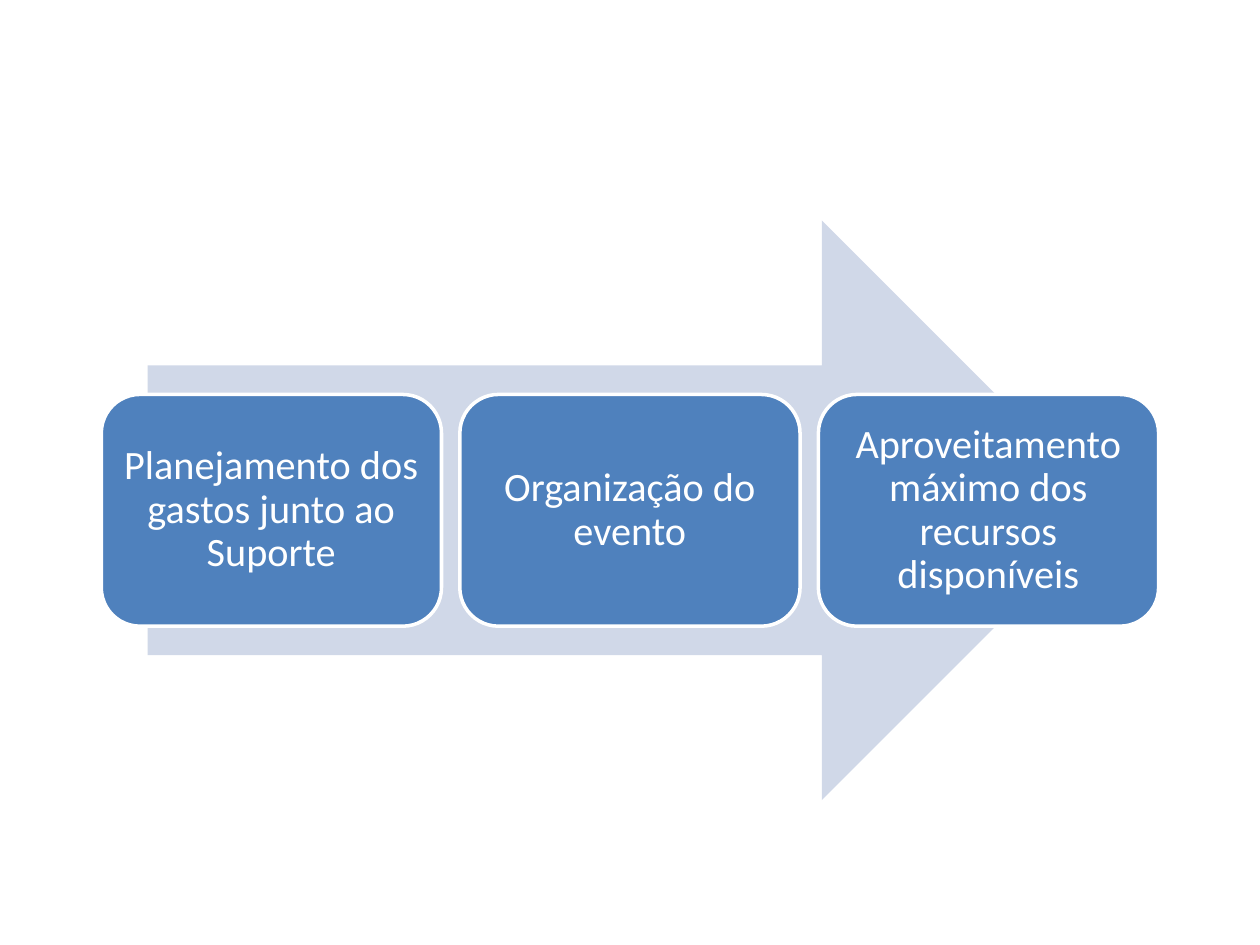
from dataclasses import dataclass

from pptx import Presentation
from pptx import util as u
from pptx.dml.color import RGBColor
from pptx.enum import shapes, text


@dataclass(frozen=True)
class Theme:
    """Colours, font and sizes of the process slide."""
    arrow: str = "D0D8E8"
    step: str = "4F81BD"
    light: str = "FFFFFF"
    font: str = "Calibri"
    size: float = 23
    border: float = 2
    inset: float = 0.7


class SlideBuilder:
    """Draws styled elements on the current slide."""

    def __init__(self, s, theme):
        self.s = s
        self.theme = theme

    def shape(self, kind, x, y, w, h, color):
        """Add a flat filled shape without outline."""
        sp = self.s.shapes.add_shape(kind, u.Pt(x), u.Pt(y), u.Pt(w), u.Pt(h))
        sp.shadow.inherit = False
        sp.fill.solid()
        sp.fill.fore_color.rgb = RGBColor.from_string(color)
        sp.line.fill.background()
        return sp

    def arrow(self, x, y, w, h):
        """Add the background arrow."""
        return self.shape(shapes.MSO_SHAPE.RIGHT_ARROW, x, y, w, h, self.theme.arrow)

    def step(self, label, x, y, w, h):
        """Add a rounded step box with a centred label."""
        t = self.theme
        light = RGBColor.from_string(t.light)
        sp = self.shape(shapes.MSO_SHAPE.ROUNDED_RECTANGLE, x, y, w, h, t.step)
        sp.line.color.rgb = light
        sp.line.width = u.Pt(t.border)
        tf = sp.text_frame
        tf.word_wrap = True
        tf.vertical_anchor = text.MSO_ANCHOR.MIDDLE
        tf.margin_left = tf.margin_right = u.Pt(t.inset)
        tf.margin_top = tf.margin_bottom = u.Pt(t.inset)
        p = tf.paragraphs[0]
        p.alignment = text.PP_ALIGN.CENTER
        p.line_spacing = 0.9
        r = p.add_run()
        r.text = label
        r.font.name = t.font
        r.font.size = u.Pt(t.size)
        r.font.color.rgb = light
        return sp


def main():
    """Build the three-step process slide."""
    prs = Presentation()
    prs.slide_width, prs.slide_height = u.Pt(720), u.Pt(540)
    builder = SlideBuilder(prs.slides.add_slide(prs.slide_layouts[6]), Theme())
    builder.arrow(84.4, 126, 550.8, 331.2)

    steps = (
        "Planejamento dos gastos junto ao Suporte",
        "Organização do evento",
        "Aproveitamento máximo dos recursos disponíveis",
    )
    left, top, width, height, gap = 57.9, 225.4, 194.4, 132.4, 10.5
    for i, label in enumerate(steps):
        builder.step(label, left + i * (width + gap), top, width, height)

    prs.save("out.pptx")


if __name__ == "__main__":
    main()
